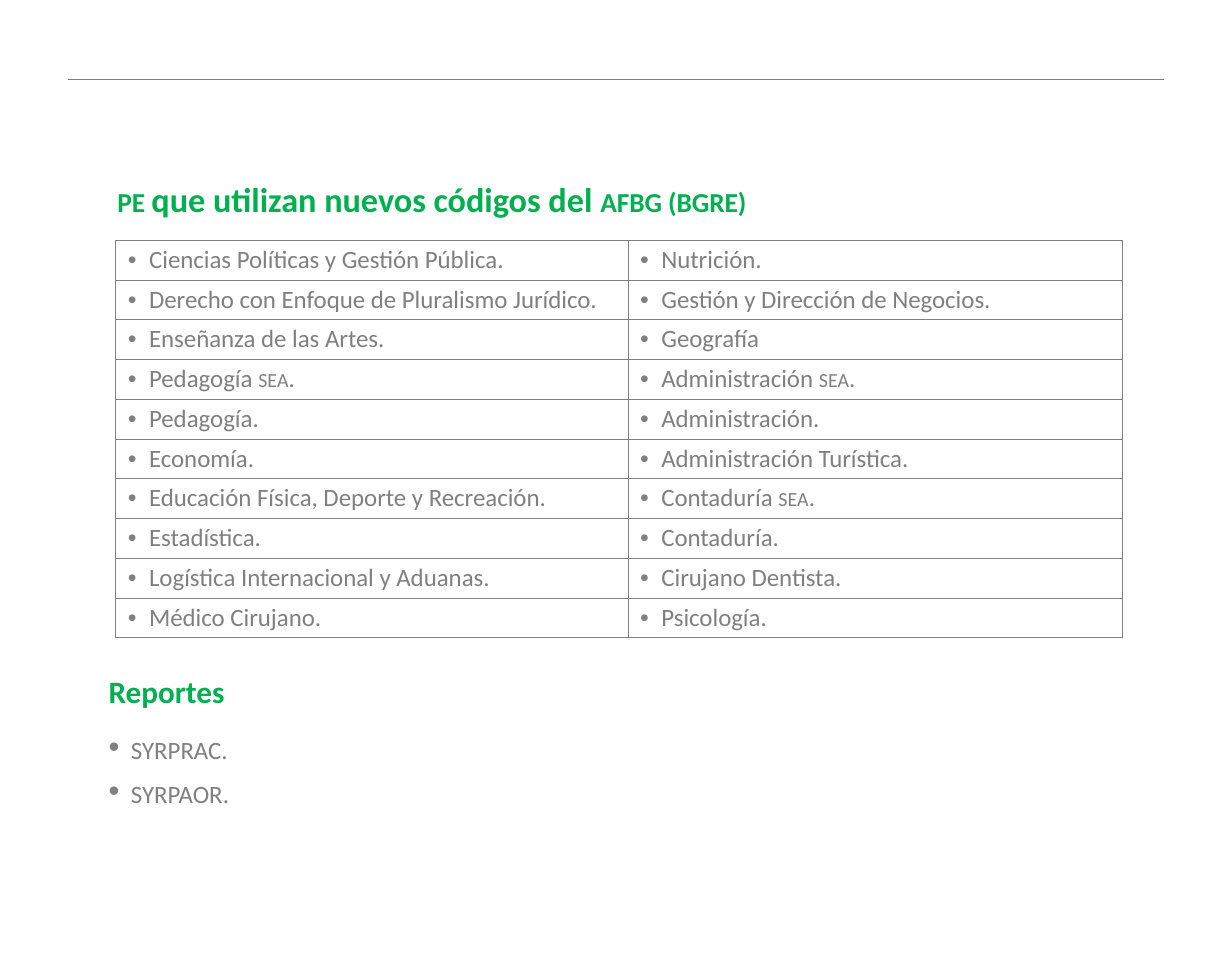
from dataclasses import dataclass

import lxml.etree
import pptx
import pptx.dml.color
import pptx.enum.shapes
import pptx.enum.text
import pptx.oxml.ns
import pptx.util

Inches = pptx.util.Inches
Pt = pptx.util.Pt
qn = pptx.oxml.ns.qn


@dataclass(frozen=True)
class Theme:
    font: str = "Calibri"
    green: str = "00B050"
    gray: str = "808080"
    title_size: int = 22
    report_size: int = 20
    table_size: int = 16
    rule_width: float = 0.75
    border_width: float = 0.25


PROGRAMS = [
    ("Ciencias Políticas y Gestión Pública.", "Nutrición."),
    ("Derecho con Enfoque de Pluralismo Jurídico.", "Gestión y Dirección de Negocios."),
    ("Enseñanza de las Artes.", "Geografía"),
    ("Pedagogía |sea|.", "Administración |sea|."),
    ("Pedagogía.", "Administración."),
    ("Economía.", "Administración Turística."),
    ("Educación Física, Deporte y Recreación.", "Contaduría |sea|."),
    ("Estadística.", "Contaduría."),
    ("Logística Internacional y Aduanas.", "Cirujano Dentista."),
    ("Médico Cirujano.", "Psicología."),
]
REPORTS = ["|syrprac.|", "|syrpaor.|"]


def rgb(color):
    return pptx.dml.color.RGBColor.from_string(color)


def write(paragraph, text, *, font, size, color, bold=False, indent=None, before=0, after=0):
    """Fill a paragraph; parts between bars are small caps, an indent adds a hanging bullet."""
    paragraph.space_before = Pt(before)
    paragraph.space_after = Pt(after)
    if indent:
        left, hanging = indent
        properties = paragraph._p.get_or_add_pPr()
        properties.set("marL", str(Inches(left)))
        properties.set("indent", str(-Inches(hanging)))
        bullet_font = lxml.etree.SubElement(properties, qn("a:buFont"))
        bullet_font.set("typeface", "Arial")
        lxml.etree.SubElement(properties, qn("a:buChar")).set("char", "•")
    for index, part in enumerate(text.split("|")):
        if not part:
            continue
        run = paragraph.add_run()
        run.text = part
        run.font.name = font
        run.font.size = Pt(size)
        run.font.bold = bold
        run.font.color.rgb = rgb(color)
        if index % 2:
            run._r.get_or_add_rPr().set("cap", "small")


class SlideBuilder:
    def __init__(self, slide, theme):
        self.slide = slide
        self.theme = theme

    def rule(self, left, right, top):
        line = self.slide.shapes.add_connector(
            pptx.enum.shapes.MSO_CONNECTOR.STRAIGHT,
            Inches(left), Inches(top), Inches(right), Inches(top))
        line.line.color.rgb = rgb(self.theme.gray)
        line.line.width = Pt(self.theme.rule_width)
        lxml.etree.SubElement(line._element.spPr, qn("a:effectLst"))

    def text_frame(self, left, top, width, height):
        box = self.slide.shapes.add_textbox(
            Inches(left), Inches(top), Inches(width), Inches(height))
        box.text_frame.word_wrap = True
        return box.text_frame

    def title(self, text, *place):
        write(self.text_frame(*place).paragraphs[0], text, font=self.theme.font,
              size=self.theme.title_size, color=self.theme.green, bold=True)

    def bulleted_list(self, heading, items, *place):
        frame = self.text_frame(*place)
        style = {"font": self.theme.font, "size": self.theme.report_size}
        write(frame.paragraphs[0], heading, color=self.theme.green, bold=True, after=10, **style)
        for item in items:
            write(frame.add_paragraph(), item, color=self.theme.gray,
                  indent=(0.2, 0.2), before=2, after=2, **style)

    def table(self, rows, left, top, column_widths, row_height):
        table = self.slide.shapes.add_table(
            len(rows), len(column_widths), Inches(left), Inches(top),
            Inches(sum(column_widths)), Inches(row_height * len(rows))).table
        table.first_row = table.horz_banding = False
        for column, width in zip(table.columns, column_widths):
            column.width = Inches(width)
        for row, texts in zip(table.rows, rows):
            row.height = Inches(row_height)
            for cell, text in zip(row.cells, texts):
                self.table_cell(cell, text)

    def table_cell(self, cell, text):
        cell.vertical_anchor = pptx.enum.text.MSO_ANCHOR.MIDDLE
        cell.margin_left = cell.margin_right = Inches(0.01)
        cell.margin_top = cell.margin_bottom = Inches(0.01)
        for side in ("lnL", "lnR", "lnT", "lnB"):
            border = lxml.etree.SubElement(cell._tc.get_or_add_tcPr(), qn(f"a:{side}"))
            border.set("w", str(Pt(self.theme.border_width)))
            fill = lxml.etree.SubElement(border, qn("a:solidFill"))
            lxml.etree.SubElement(fill, qn("a:srgbClr")).set("val", self.theme.gray)
        cell.fill.background()
        write(cell.text_frame.paragraphs[0], text, font=self.theme.font,
              size=self.theme.table_size, color=self.theme.gray, indent=(0.29, 0.19))


def main():
    deck = pptx.Presentation()
    deck.slide_width = Inches(10.99)
    deck.slide_height = Inches(8.51)
    builder = SlideBuilder(deck.slides.add_slide(deck.slide_layouts[6]), Theme())
    builder.rule(0.61, 10.38, 0.71)
    builder.title("|pe |que utilizan nuevos códigos del |afbg (bgre)|", 0.95, 1.54, 9.37, 0.47)
    builder.bulleted_list("Reportes", REPORTS, 0.87, 5.95, 2.52, 1.33)
    builder.table(PROGRAMS, 1.03, 2.14, (4.57, 4.41), 3.55 / len(PROGRAMS))
    deck.save("out.pptx")


if __name__ == "__main__":
    main()
